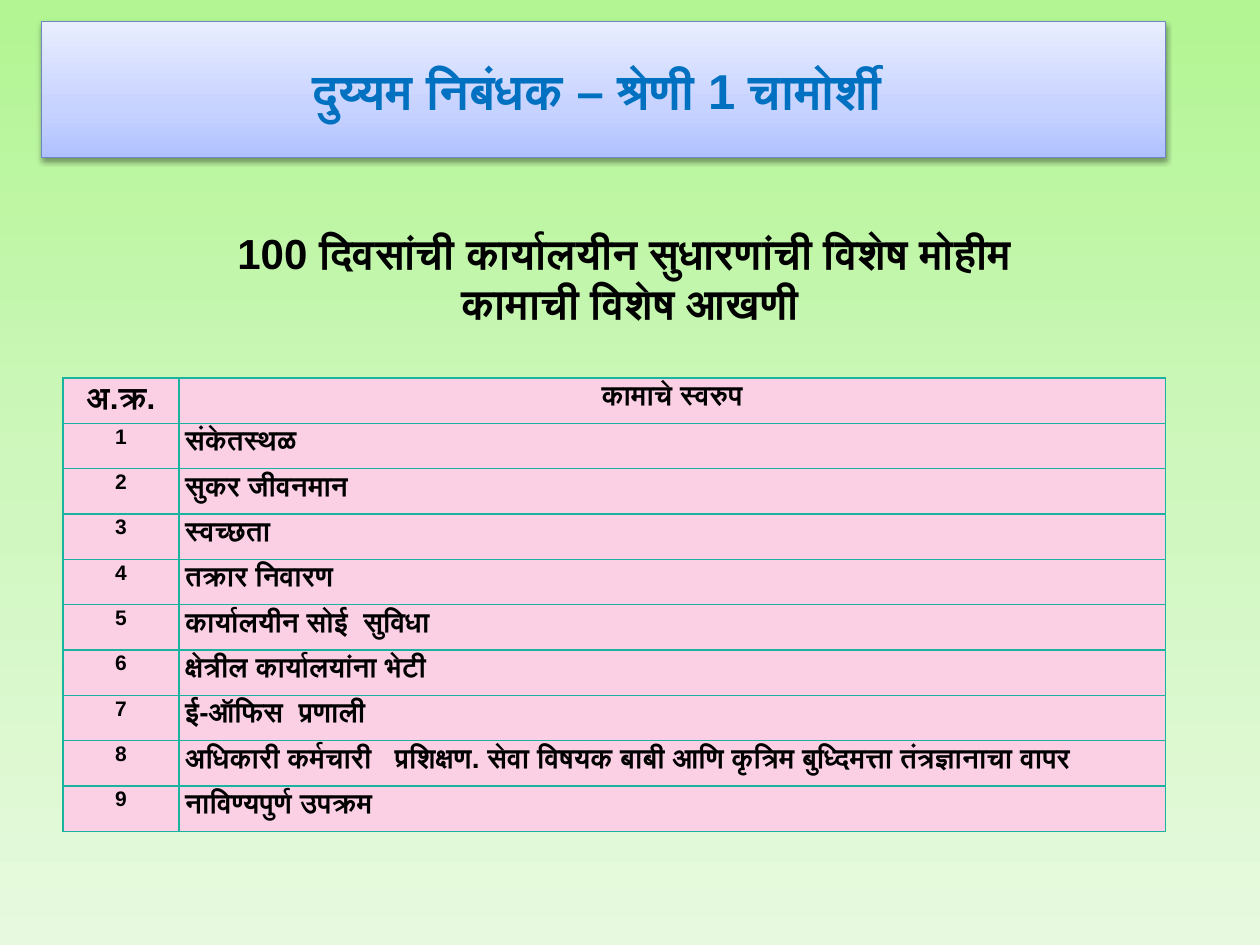
from dataclasses import dataclass

from lxml.etree import SubElement as Sub
from pptx import Presentation
from pptx.dml.color import RGBColor
from pptx.enum.text import MSO_ANCHOR as Anchor, MSO_AUTO_SIZE as Fit, PP_ALIGN as Align
from pptx.oxml.ns import qn
from pptx.util import Inches, Pt

FONT = "Arial"
BLACK, BLUE, PINK, TEAL = "000000", "0070C0", "FBD0E4", "1AB39F"
ROW_H = 0.36
COLS = (0.92, 7.83)
TASKS = (
    "संकेतस्थळ",
    "सुकर जीवनमान",
    "स्वच्छता",
    "तक्रार निवारण",
    "कार्यालयीन सोई  सुविधा",
    "क्षेत्रील कार्यालयांना भेटी",
    "ई-ऑफिस  प्रणाली",
    "अधिकारी कर्मचारी   प्रशिक्षण. सेवा विषयक बाबी आणि कृत्रिम बुध्दिमत्ता तंत्रज्ञानाचा वापर",
    "नाविण्यपुर्ण उपक्रम",
)


@dataclass
class Entry:
    text: str
    size: int
    align: Align = Align.CENTER


def rgb(code: str) -> RGBColor:
    return RGBColor.from_string(code)


def style(frame, size: int, color: str = BLACK, align: Align = Align.CENTER) -> None:
    for para in frame.paragraphs:
        para.alignment = align
        for run in para.runs:
            font = run.font
            font.name, font.size, font.bold = FONT, Pt(size), True
            font.color.rgb = rgb(color)
            Sub(run._r.get_or_add_rPr(), qn("a:cs"), typeface=FONT)


def shade(fill, root, angle: int, stops: dict[int, str]) -> None:
    """Fill with a linear gradient; stops map percent to colour."""
    fill.gradient()
    fill.gradient_angle = angle
    items = root.find(".//" + qn("a:gsLst"))
    items.clear()
    for place, code in stops.items():
        stop = Sub(items, qn("a:gs"), pos=str(place * 1000))
        Sub(stop, qn("a:srgbClr"), val=code)


def drop_shadow(shape) -> None:
    effects = Sub(shape._element.spPr, qn("a:effectLst"))
    shadow = Sub(effects, qn("a:outerShdw"), blurRad=str(Pt(3.1)), dist=str(Pt(1.6)),
                 dir="5400000", rotWithShape="0")
    color = Sub(shadow, qn("a:srgbClr"), val=BLACK)
    Sub(color, qn("a:alpha"), val="38000")


def border(cell) -> None:
    props = cell._tc.get_or_add_tcPr()
    for spot, side in enumerate("LRTB"):
        line = Sub(props, qn(f"a:ln{side}"), w=str(Pt(1)))
        Sub(Sub(line, qn("a:solidFill")), qn("a:srgbClr"), val=TEAL)
        props.insert(spot, line)


def draw_cell(cell, entry: Entry) -> None:
    cell.margin_left = cell.margin_right = Inches(0.05)
    cell.margin_top = cell.margin_bottom = 0
    cell.fill.solid()
    cell.fill.fore_color.rgb = rgb(PINK)
    border(cell)
    cell.text_frame.text = entry.text
    cell.text_frame.paragraphs[0].line_spacing = 1.07
    style(cell.text_frame, entry.size, align=entry.align)


def draw_title(slide) -> None:
    title = slide.shapes.title
    title.left, title.top = Inches(0.33), Inches(0.17)
    title.width, title.height = Inches(8.92), Inches(1.08)
    shade(title.fill, title._element, 90, {0: "B0C1FF", 35: "C6D2FF", 100: "E9EEFF"})
    title.line.color.rgb = rgb("6E86C6")
    title.line.width = Pt(0.75)
    drop_shadow(title)
    frame = title.text_frame
    frame.text = "दुय्यम निबंधक – श्रेणी 1 चामोर्शी "
    frame.auto_size, frame.vertical_anchor = Fit.NONE, Anchor.MIDDLE
    style(frame, 28, BLUE)


def draw_lead(slide, width: int) -> None:
    frame = slide.shapes.add_textbox(0, Inches(1.75), width, Inches(0.91)).text_frame
    frame.word_wrap = True
    frame.auto_size, frame.vertical_anchor = Fit.SHAPE_TO_FIT_TEXT, Anchor.MIDDLE
    frame.text = "100 दिवसांची कार्यालयीन सुधारणांची विशेष मोहीम \nकामाची विशेष आखणी"
    style(frame, 24)


def draw_table(slide) -> None:
    rows = [(Entry("अ.क्र.", 18), Entry("कामाचे स्वरुप", 16))]
    rows += [(Entry(str(num), 12), Entry(task, 16, Align.LEFT))
             for num, task in enumerate(TASKS, 1)]
    table = slide.shapes.add_table(len(rows), len(COLS), Inches(0.5), Inches(3),
                                   Inches(sum(COLS)), Inches(ROW_H * len(rows))).table
    table.first_row = table.horz_banding = False
    for col, width in zip(table.columns, COLS):
        col.width = Inches(width)
    for row, entries in zip(table.rows, rows):
        row.height = Inches(ROW_H)
        for cell, entry in zip(row.cells, entries):
            draw_cell(cell, entry)


def main() -> None:
    deck = Presentation()
    deck.slide_width, deck.slide_height = Inches(10), Inches(7.5)
    slide = deck.slides.add_slide(deck.slide_layouts.get_by_name("Title Only"))
    shade(slide.background.fill, slide._element, 270,
          {0: "B2F592", 50: "CEF7BD", 100: "E7FADF"})
    draw_title(slide)
    draw_lead(slide, deck.slide_width)
    draw_table(slide)
    deck.save("out.pptx")


if __name__ == "__main__":
    main()
